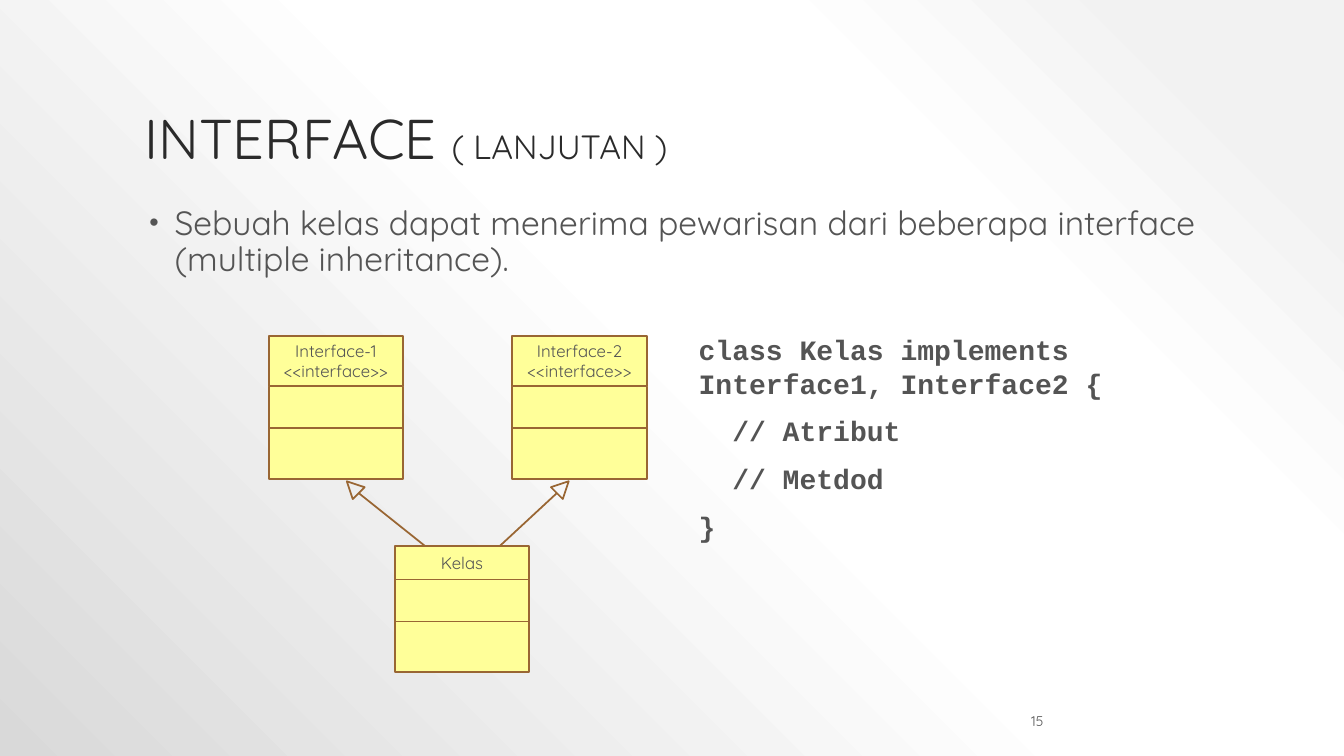
from math import cos, radians, sin
from lxml.etree import SubElement
from pptx import Presentation
from pptx.dml.color import RGBColor
from pptx.enum.shapes import MSO_CONNECTOR, MSO_SHAPE
from pptx.enum.text import MSO_ANCHOR as Anchor, MSO_AUTO_SIZE as AutoSize, PP_ALIGN as Align
from pptx.oxml.ns import qn
from pptx.util import Inches, Pt

INK = RGBColor(0x54, 0x54, 0x54)
TITLE_INK = RGBColor(0x2A, 0x2A, 0x2A)
BOX_FILL = RGBColor(0xFF, 0xFF, 0x99)
BOX_LINE = RGBColor(0x99, 0x66, 0x33)
BACKDROP = ((10, "F2F2F2"), (28, "FFFFFF"), (48, "FFFFFF"), (100, "D9D9D9"))

COLUMNS, ROWS = 160, 90
CLASS_WIDTH = 16
ATTRIBUTE_ROWS, METHOD_ROWS = 5, 6


class DiagramSlide:
    """One slide on a 160 by 90 grid; every position is in grid columns and rows."""

    body_font = "Quicksand"
    code_font = "Courier New"
    line_width = Pt(1.25)

    def __init__(self, deck):
        self.column = deck.slide_width / COLUMNS
        self.row = deck.slide_height / ROWS
        self.slide = deck.slides.add_slide(deck.slide_layouts[5])

    def place(self, left, top, width, height):
        return (round(left * self.column), round(top * self.row),
                round(width * self.column), round(height * self.row))

    def backdrop(self, stops):
        """Radial gradient centred on the top right corner."""
        self.slide.background.fill.gradient()
        gradient = self.slide.element.find(".//" + qn("a:gradFill"))
        for child in list(gradient):
            gradient.remove(child)
        stop_list = SubElement(gradient, qn("a:gsLst"))
        for percent, color in stops:
            stop = SubElement(stop_list, qn("a:gs"), pos=str(percent * 1000))
            SubElement(stop, qn("a:srgbClr"), val=color)
        circle = SubElement(gradient, qn("a:path"), path="circle")
        SubElement(circle, qn("a:fillToRect"), l="100000", b="100000")

    def style(self, paragraph, size, font=None, color=INK, align=Align.LEFT, bold=False):
        paragraph.alignment = align
        paragraph.font.name = font or self.body_font
        paragraph.font.size = Pt(size)
        paragraph.font.bold = bold
        paragraph.font.color.rgb = color

    def title(self, main, suffix, *cell):
        heading = self.slide.shapes.title
        heading.left, heading.top, heading.width, heading.height = self.place(*cell)
        frame = heading.text_frame
        frame.auto_size = AutoSize.NONE
        frame.vertical_anchor = Anchor.BOTTOM
        paragraph = frame.paragraphs[0]
        paragraph.line_spacing = 0.9
        self.style(paragraph, 40, color=TITLE_INK)
        paragraph.add_run().text = main
        small = paragraph.add_run()
        small.text = suffix
        small.font.size = Pt(24)

    def text_frame(self, *cell, anchor=Anchor.TOP):
        frame = self.slide.shapes.add_textbox(*self.place(*cell)).text_frame
        frame.word_wrap = True
        frame.vertical_anchor = anchor
        return frame

    def bullet(self, text, *cell):
        paragraph = self.text_frame(*cell).paragraphs[0]
        paragraph.text = text
        paragraph.line_spacing = 0.9
        paragraph.space_before = Pt(18)
        self.style(paragraph, 24)
        properties = paragraph._p.get_or_add_pPr()
        properties.set("marL", str(Inches(0.3)))
        properties.set("indent", str(Inches(-0.25)))
        marker = properties.find(qn("a:defRPr"))
        for tag, attributes in (("a:buSzPct", {"val": "80000"}),
                                ("a:buFont", {"typeface": "Arial"}),
                                ("a:buChar", {"char": "•"})):
            marker.addprevious(properties.makeelement(qn(tag), attributes))

    def code(self, lines, *cell):
        """Lines are (indent in characters, text) pairs."""
        frame = self.text_frame(*cell)
        for number, (indent, text) in enumerate(lines):
            paragraph = frame.add_paragraph() if number else frame.paragraphs[0]
            paragraph.text = text
            paragraph.space_before = Pt(10)
            self.style(paragraph, 20, self.code_font, bold=True)
            paragraph._p.get_or_add_pPr().set("marL", str(Pt(12 * indent)))

    def page_number(self, number, *cell):
        paragraph = self.text_frame(*cell, anchor=Anchor.MIDDLE).paragraphs[0]
        paragraph.text = str(number)
        self.style(paragraph, 10, align=Align.RIGHT)

    def outline(self, element):
        element.line.color.rgb = BOX_LINE
        element.line.width = self.line_width

    def class_box(self, labels, left, top, name_rows):
        """UML class: name, attribute and method compartments, stacked."""
        compartments = self.slide.shapes.add_group_shape().shapes
        for names, rows in ((labels, name_rows), ((), ATTRIBUTE_ROWS), ((), METHOD_ROWS)):
            box = compartments.add_shape(
                MSO_SHAPE.RECTANGLE, *self.place(left, top, CLASS_WIDTH, rows))
            box.shadow.inherit = False
            box.fill.solid()
            box.fill.fore_color.rgb = BOX_FILL
            self.outline(box)
            if names:
                frame = box.text_frame
                frame.word_wrap = False
                frame.vertical_anchor = Anchor.MIDDLE
                frame.text = "\n".join(names)
                for paragraph in frame.paragraphs:
                    self.style(paragraph, 12, align=Align.CENTER)
            top += rows

    def inheritance(self, tip_x, tip_y, start_x, start_y, angle):
        """Hollow triangle, two cells wide and turned by angle, with a line from its base."""
        parts = self.slide.shapes.add_group_shape().shapes
        head = parts.add_shape(MSO_SHAPE.ISOSCELES_TRIANGLE,
                               *self.place(tip_x - 1, tip_y, 2, 2))
        head.rotation = angle
        head.shadow.inherit = False
        head.fill.background()
        self.outline(head)
        base_x = tip_x - sin(radians(angle))
        base_y = tip_y + 1 + cos(radians(angle))
        line = parts.add_connector(MSO_CONNECTOR.STRAIGHT,
                                   *self.place(base_x, base_y, start_x, start_y))
        self.outline(line)
        SubElement(line._element.spPr, qn("a:effectLst"))


def main():
    deck = Presentation()
    deck.slide_width, deck.slide_height = Inches(13.33), Inches(7.5)
    page = DiagramSlide(deck)
    page.backdrop(BACKDROP)
    page.page_number(15, 107, 84.6, 18.4, 2.4)
    page.title("INTERFACE ", "( LANJUTAN )", 16, 3.6, 128, 17.4)
    page.bullet("Sebuah kelas dapat menerima pewarisan dari beberapa interface "
                "(multiple inheritance).", 16, 24, 128, 57)

    for number, left in ((1, 32), (2, 61)):
        page.class_box((f"Interface-{number}", "<<interface>>"), left, 40, 6)
    page.class_box(("Kelas",), 47, 65, 4)
    page.inheritance(42, 57, 50.6, 65, 315)
    page.inheritance(67, 57, 59.5, 65, 45)

    page.code(((0, "class Kelas implements Interface1, Interface2 {"),
               (2, "// Atribut"), (2, "// Metdod"), (0, "}")), 82, 39, 53, 27.2)
    deck.save("out.pptx")


if __name__ == "__main__":
    main()
